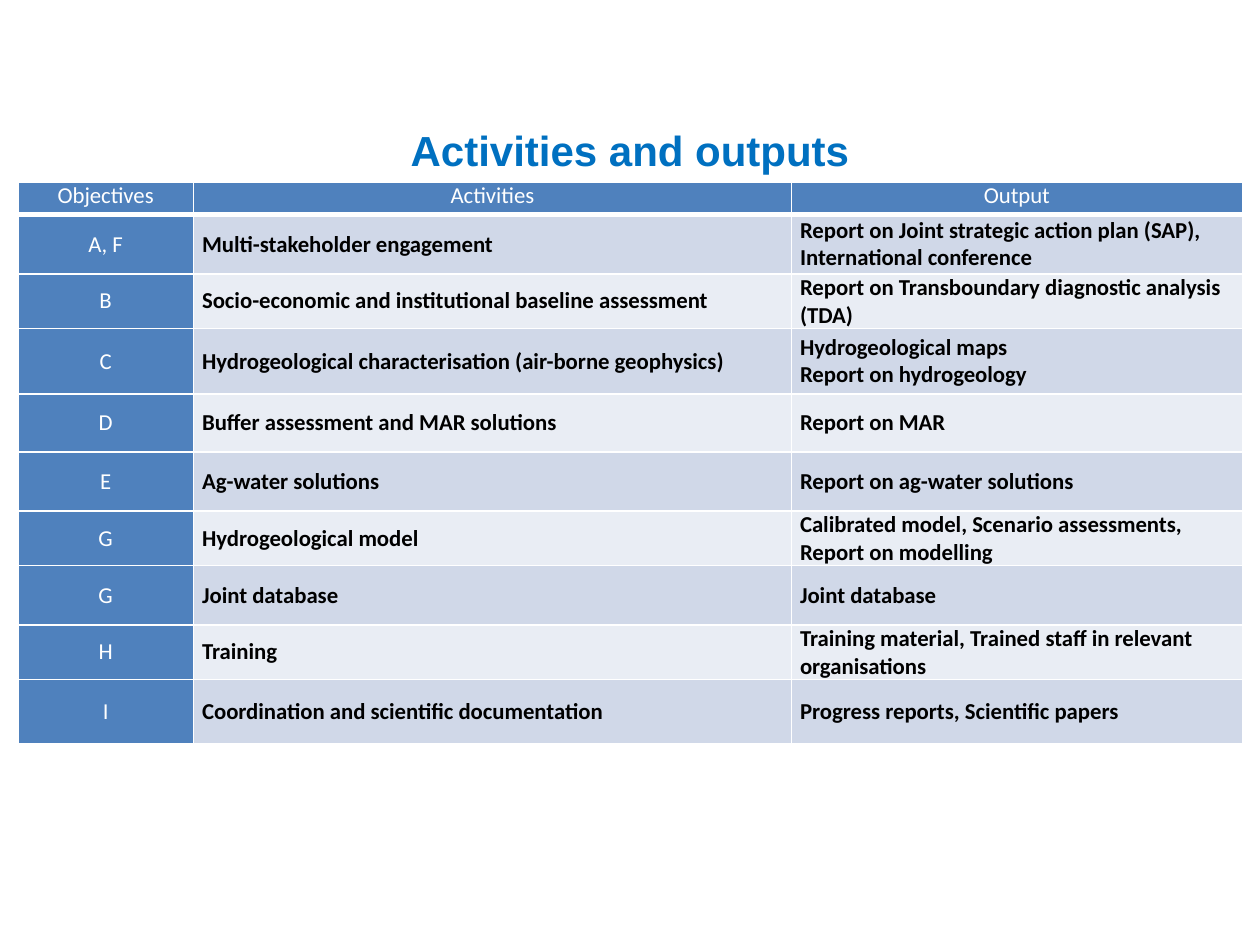
from dataclasses import dataclass

from lxml import etree
from pptx import Presentation
from pptx import util as u
from pptx.dml.color import RGBColor
from pptx.enum import text
from pptx.oxml import ns

TITLE_BLUE = RGBColor(0x00, 0x70, 0xC0)
HEADER_BLUE = RGBColor(0x4F, 0x81, 0xBD)
DARK_BAND = RGBColor(0xD0, 0xD8, 0xE8)
LIGHT_BAND = RGBColor(0xE9, 0xED, 0xF4)
WHITE = RGBColor(0xFF, 0xFF, 0xFF)
BLACK = RGBColor(0x00, 0x00, 0x00)

CENTER = text.PP_ALIGN.CENTER
LEFT = text.PP_ALIGN.LEFT
TOP = text.MSO_ANCHOR.TOP
MIDDLE = text.MSO_ANCHOR.MIDDLE

CELL_MARGINS = {
    "margin_left": u.Pt(5),
    "margin_right": u.Pt(5),
    "margin_top": u.Pt(0),
    "margin_bottom": u.Pt(0),
}
TITLE_FONT = {"name": "Arial", "size": u.Pt(24), "bold": True}
LABEL_FONT = {"name": "Calibri", "size": u.Pt(13), "bold": False}
BODY_FONT = {**LABEL_FONT, "bold": True}


@dataclass(frozen=True)
class CellStyle:
    fill: RGBColor
    color: RGBColor
    font: dict
    alignment: text.PP_ALIGN
    anchor: text.MSO_ANCHOR
    bottom_line: float = 1


@dataclass(frozen=True)
class Objective:
    height: float
    label: str
    activity: str
    output: str


HEADER = CellStyle(HEADER_BLUE, WHITE, LABEL_FONT, CENTER, TOP, 3)
LABEL = CellStyle(HEADER_BLUE, WHITE, LABEL_FONT, CENTER, MIDDLE)
BANDS = [
    CellStyle(band, BLACK, BODY_FONT, LEFT, MIDDLE)
    for band in (LIGHT_BAND, DARK_BAND)
]

COLUMN_WIDTHS = (100.3, 341.7, 257.7)
TABLE_HEIGHT = 321.8
OBJECTIVES = [
    Objective(18.7, "Objectives", "Activities", "Output"),
    Objective(33.8, "A, F", "Multi-stakeholder engagement",
              "Report on Joint strategic action plan (SAP), International conference"),
    Objective(28, "B", "Socio-economic and institutional baseline assessment",
              "Report on Transboundary diagnostic analysis (TDA)"),
    Objective(37.4, "C", "Hydrogeological characterisation (air-borne geophysics)",
              "Hydrogeological maps\nReport on hydrogeology"),
    Objective(33.1, "D", "Buffer assessment and MAR solutions", "Report on MAR"),
    Objective(33.8, "E", "Ag-water solutions", "Report on ag-water solutions"),
    Objective(26, "G", "Hydrogeological model",
              "Calibrated model, Scenario assessments, Report on modelling"),
    Objective(33.8, "G", "Joint database", "Joint database"),
    Objective(21.6, "H", "Training",
              "Training material, Trained staff in relevant organisations"),
    Objective(36.7, "I", "Coordination and scientific documentation",
              "Progress reports, Scientific papers"),
]


def apply_format(target, values: dict) -> None:
    for name, value in values.items():
        setattr(target, name, value)


def write_text(frame, wording: str, font: dict, color: RGBColor,
               alignment: text.PP_ALIGN) -> None:
    frame.text = wording
    for paragraph in frame.paragraphs:
        paragraph.alignment = alignment
        for run in paragraph.runs:
            apply_format(run.font, font)
            run.font.color.rgb = color


def draw_borders(cell, bottom_line: float) -> None:
    properties = cell._tc.get_or_add_tcPr()
    widths = {"a:lnL": 1, "a:lnR": 1, "a:lnT": 1, "a:lnB": bottom_line}
    for tag, width in widths.items():
        line = etree.SubElement(properties, ns.qn(tag), w=str(u.Pt(width)))
        fill = etree.SubElement(line, ns.qn("a:solidFill"))
        etree.SubElement(fill, ns.qn("a:srgbClr"), val=str(WHITE))


def draw_cell(cell, wording: str, style: CellStyle) -> None:
    apply_format(cell, {**CELL_MARGINS, "vertical_anchor": style.anchor})
    draw_borders(cell, style.bottom_line)
    cell.fill.solid()
    cell.fill.fore_color.rgb = style.fill
    write_text(cell.text_frame, wording, style.font, style.color, style.alignment)


def draw_title(slide) -> None:
    title = slide.shapes.add_textbox(u.Pt(0), u.Pt(67.7), u.Pt(720), u.Pt(36))
    frame = title.text_frame
    apply_format(frame, {
        "word_wrap": True,
        "auto_size": text.MSO_AUTO_SIZE.SHAPE_TO_FIT_TEXT,
    })
    write_text(frame, "Activities and outputs", TITLE_FONT, TITLE_BLUE, CENTER)


def draw_objectives(slide) -> None:
    holder = slide.shapes.add_table(
        len(OBJECTIVES), len(COLUMN_WIDTHS), u.Pt(10.2), u.Pt(104),
        u.Pt(sum(COLUMN_WIDTHS)), u.Pt(TABLE_HEIGHT))
    table = holder.table
    for column, width in zip(table.columns, COLUMN_WIDTHS):
        column.width = u.Pt(width)
    for index, objective in enumerate(OBJECTIVES):
        table.rows[index].height = u.Pt(objective.height)
        band = BANDS[index % 2]
        styles = (LABEL, band, band) if index else (HEADER,) * 3
        wordings = (objective.label, objective.activity, objective.output)
        for cell, wording, style in zip(table.rows[index].cells, wordings, styles):
            draw_cell(cell, wording, style)
    holder.height = u.Pt(TABLE_HEIGHT)


def main() -> None:
    deck = Presentation()
    apply_format(deck, {"slide_width": u.Pt(720), "slide_height": u.Pt(540)})
    slide = deck.slides.add_slide(deck.slide_layouts[6])
    draw_title(slide)
    draw_objectives(slide)
    deck.save("out.pptx")


if __name__ == "__main__":
    main()
